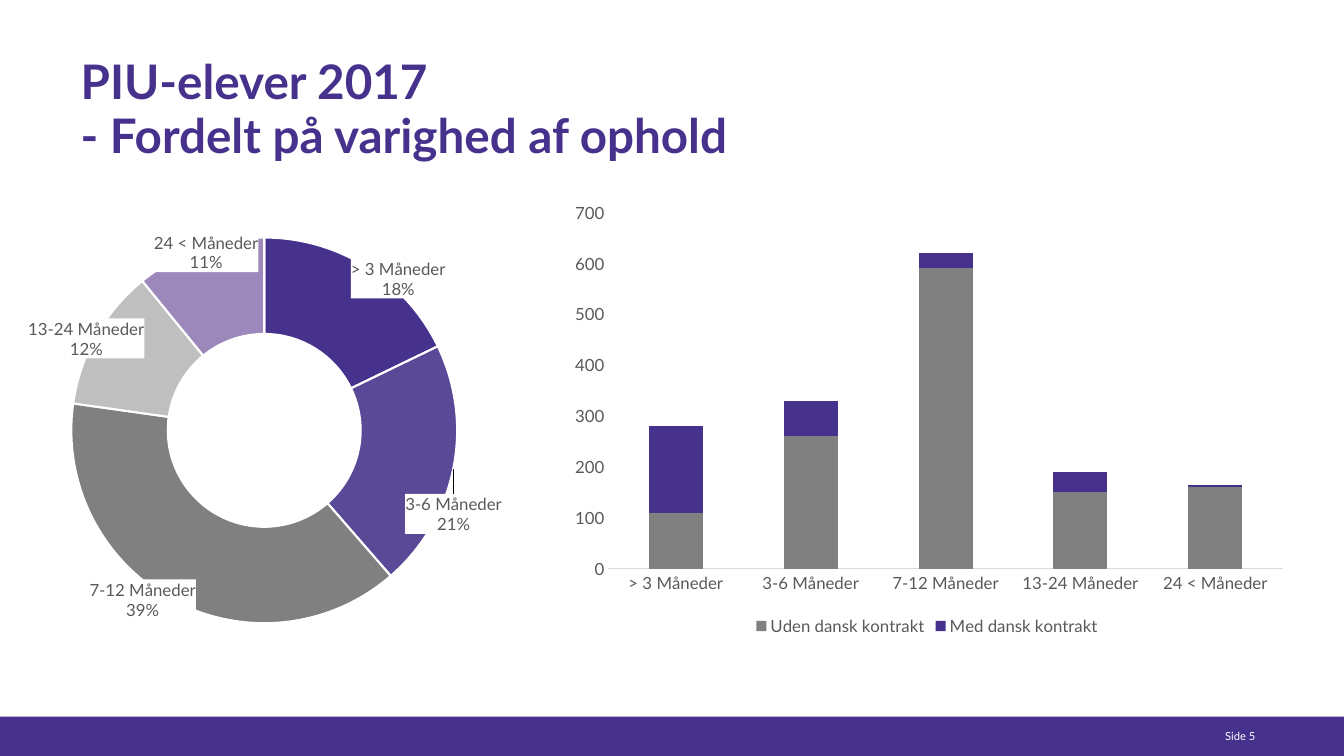
import pptx
import pptx.util
import pptx.chart.data
import pptx.dml.color
import pptx.enum.chart
import pptx.enum.shapes
import pptx.enum.text
import pptx.oxml

Inches = pptx.util.Inches
Pt = pptx.util.Pt
kinds = pptx.enum.chart.XL_CHART_TYPE
NS = 'xmlns:c="http://schemas.openxmlformats.org/drawingml/2006/chart" ' \
     'xmlns:a="http://schemas.openxmlformats.org/drawingml/2006/main"'
PURPLE, GREY, INK = "46328C", "808080", "595959"


def style(item, color, size=None):
    """Colour a fill or a font; a size makes it a Lato font."""
    if size:
        item.name, item.size = "Lato", Pt(size)
        item = item.color
    else:
        item.solid()
        item = item.fore_color
    item.rgb = pptx.dml.color.RGBColor.from_string(color)


def place(chart, left, top, width, height):
    """Fix the inner plot area, in fractions of the chart."""
    plot = chart.element.find(".//{*}plotArea")
    for old in plot.findall("{*}layout"):
        plot.remove(old)
    plot.insert(0, pptx.oxml.parse_xml(
        f'<c:layout {NS}><c:manualLayout><c:layoutTarget val="inner"/>'
        '<c:xMode val="edge"/><c:yMode val="edge"/>'
        f'<c:x val="{left}"/><c:y val="{top}"/>'
        f'<c:w val="{width}"/><c:h val="{height}"/></c:manualLayout></c:layout>'))


deck = pptx.Presentation()
deck.slide_width, deck.slide_height = Inches(13.33), Inches(7.5)
slide = deck.slides.add_slide(deck.slide_layouts[5])

# Footer band
band = slide.shapes.add_shape(pptx.enum.shapes.MSO_SHAPE.RECTANGLE,
                              0, Inches(7.11), Inches(13.33), Inches(0.39))
band.shadow.inherit = False
style(band.fill, PURPLE)
band.line.fill.background()

# Title and page number
title = slide.shapes.title
title.left, title.top = Inches(0.8), Inches(0.56)
title.width, title.height = Inches(11.73), Inches(1.02)
page = slide.shapes.add_textbox(Inches(12.15), Inches(7.17), Inches(0.49), Inches(0.2))
anchors = pptx.enum.text.MSO_ANCHOR
for box, text, size, color, anchor in (
        (title, "PIU-elever 2017\v- Fordelt på varighed af ophold", 34, PURPLE, anchors.TOP),
        (page, "Side 5", 8, "FFFFFF", anchors.BOTTOM)):
    frame = box.text_frame
    frame.text = text
    frame.word_wrap = True
    frame.auto_size = pptx.enum.text.MSO_AUTO_SIZE.NONE
    frame.vertical_anchor = anchor
    frame.margin_left = frame.margin_right = frame.margin_top = frame.margin_bottom = 0
    line = frame.paragraphs[0]
    line.alignment = pptx.enum.text.PP_ALIGN.LEFT
    style(line.font, color, size)
title.text_frame.paragraphs[0].font.bold = True
title.text_frame.paragraphs[0].line_spacing = 0.94

# Stacked columns: contract type by length of stay
spans = ["> 3 Måneder", "3-6 Måneder", "7-12 Måneder", "13-24 Måneder", "24 < Måneder"]
data = pptx.chart.data.CategoryChartData()
data.categories = spans
data.add_series("Uden dansk kontrakt", (110, 260, 590, 150, 160))
data.add_series("Med dansk kontrakt", (170, 70, 30, 40, 5))
bars = slide.shapes.add_chart(kinds.COLUMN_STACKED, Inches(5.52), Inches(1.93),
                              Inches(7.35), Inches(4.42), data).chart
style(bars.font, INK, 12)
bars.has_title = False
bars.has_legend = True
bars.legend.position = pptx.enum.chart.XL_LEGEND_POSITION.BOTTOM
bars.legend.include_in_layout = False
style(bars.legend.font, INK, 12)
plot = bars.plots[0]
plot.gap_width, plot.overlap = 150, 100
plot.vary_by_categories = False
for series, color in zip(plot.series, (GREY, PURPLE)):
    style(series.format.fill, color)
for axis in (bars.category_axis, bars.value_axis):
    axis.major_tick_mark = axis.minor_tick_mark = pptx.enum.chart.XL_TICK_MARK.NONE
    axis.has_major_gridlines = False
    style(axis.tick_labels.font, INK, 12)
style(bars.category_axis.format.line.fill, "D9D9D9")
bars.category_axis.format.line.width = Pt(0.75)
scale = bars.value_axis
scale.minimum_scale, scale.maximum_scale, scale.major_unit = 0, 700, 100
scale.format.line.fill.background()
place(bars, 0.07, 0.04, 0.91, 0.8)

# Doughnut: share of each length of stay
data = pptx.chart.data.CategoryChartData()
data.categories = spans
data.add_series("Series 1", (18, 21, 39, 12, 11))
ring = slide.shapes.add_chart(kinds.DOUGHNUT, Inches(0.28), Inches(2.19),
                              Inches(4.73), Inches(4.16), data).chart
style(ring.font, INK, 12)
ring.has_title = ring.has_legend = False
ring.element.find(".//{*}holeSize").set("val", "75")
place(ring, 0.09, 0.04, 0.81, 0.92)
series = ring.plots[0].series[0]
labels = series.data_labels
style(labels.font, INK, 12)
labels.show_percentage = labels.show_category_name = True
labels.show_value = False
for i, color in enumerate((PURPLE, "5A4997", GREY, "BFBFBF", "9C88BB")):
    wedge = series.points[i].format
    style(wedge.fill, color)
    style(wedge.line.fill, "FFFFFF")
    wedge.line.width = Pt(1.5)

# White label boxes, moved outwards from the ring
shifts = ((0.12, -0.07), (0.1, 0.13), (-0.11, 0.1), (-0.11, -0.05), (-0.02, -0.1))
holder = series.data_labels._element
for i, (right, down) in enumerate(shifts):
    holder.insert(i, pptx.oxml.parse_xml(
        f'<c:dLbl {NS}><c:idx val="{i}"/><c:layout><c:manualLayout>'
        f'<c:x val="{right}"/><c:y val="{down}"/></c:manualLayout></c:layout>'
        '<c:spPr><a:solidFill><a:srgbClr val="FFFFFF"/></a:solidFill></c:spPr>'
        '<c:txPr><a:bodyPr/><a:p><a:pPr><a:defRPr sz="1200"><a:solidFill>'
        f'<a:srgbClr val="{INK}"/></a:solidFill><a:latin typeface="Lato"/>'
        '</a:defRPr></a:pPr><a:endParaRPr lang="da-DK"/></a:p></c:txPr>'
        '<c:showLegendKey val="0"/><c:showVal val="0"/><c:showCatName val="1"/>'
        '<c:showSerName val="0"/><c:showPercent val="1"/><c:showBubbleSize val="0"/>'
        '<c:separator>\n</c:separator></c:dLbl>'))

deck.save("out.pptx")
